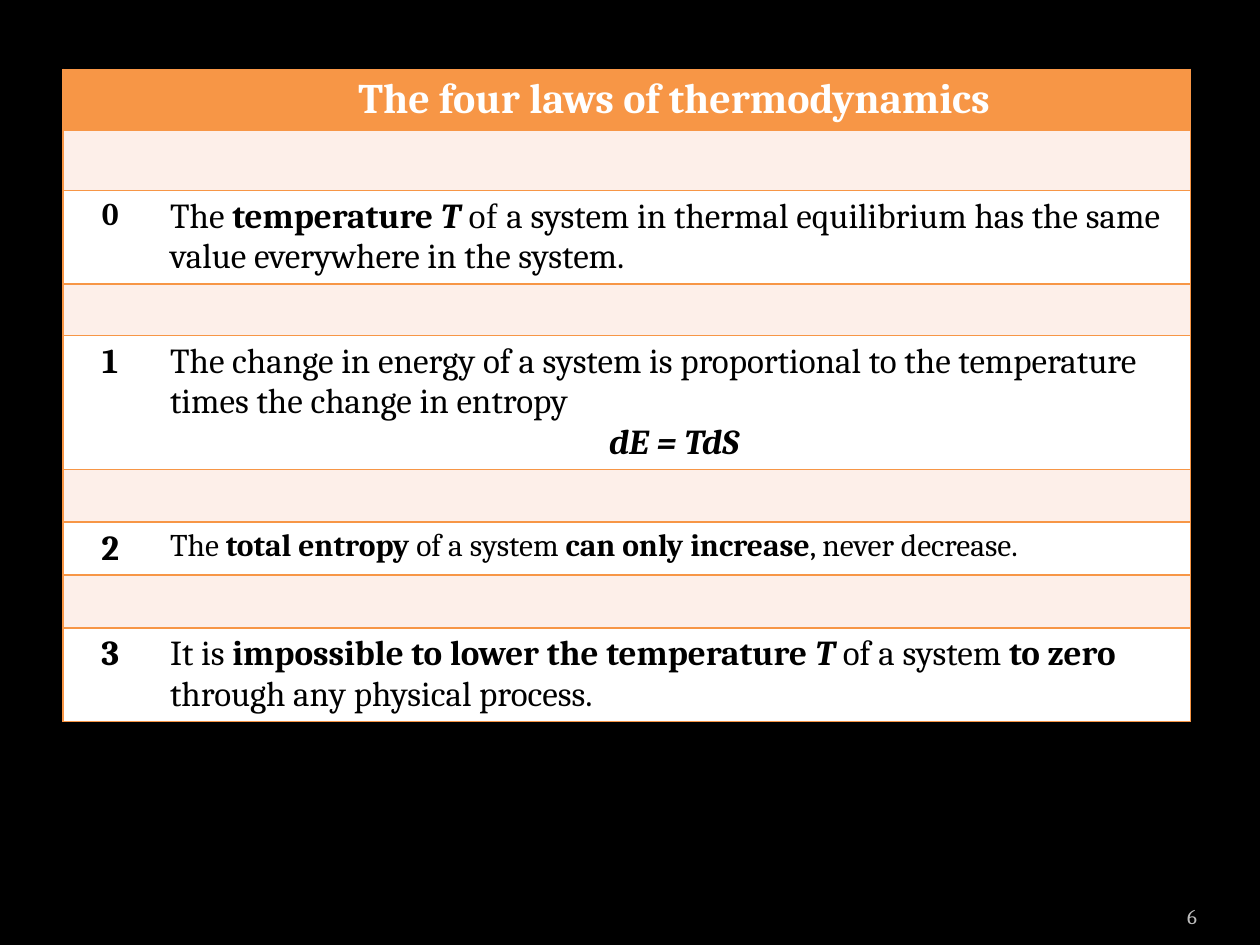
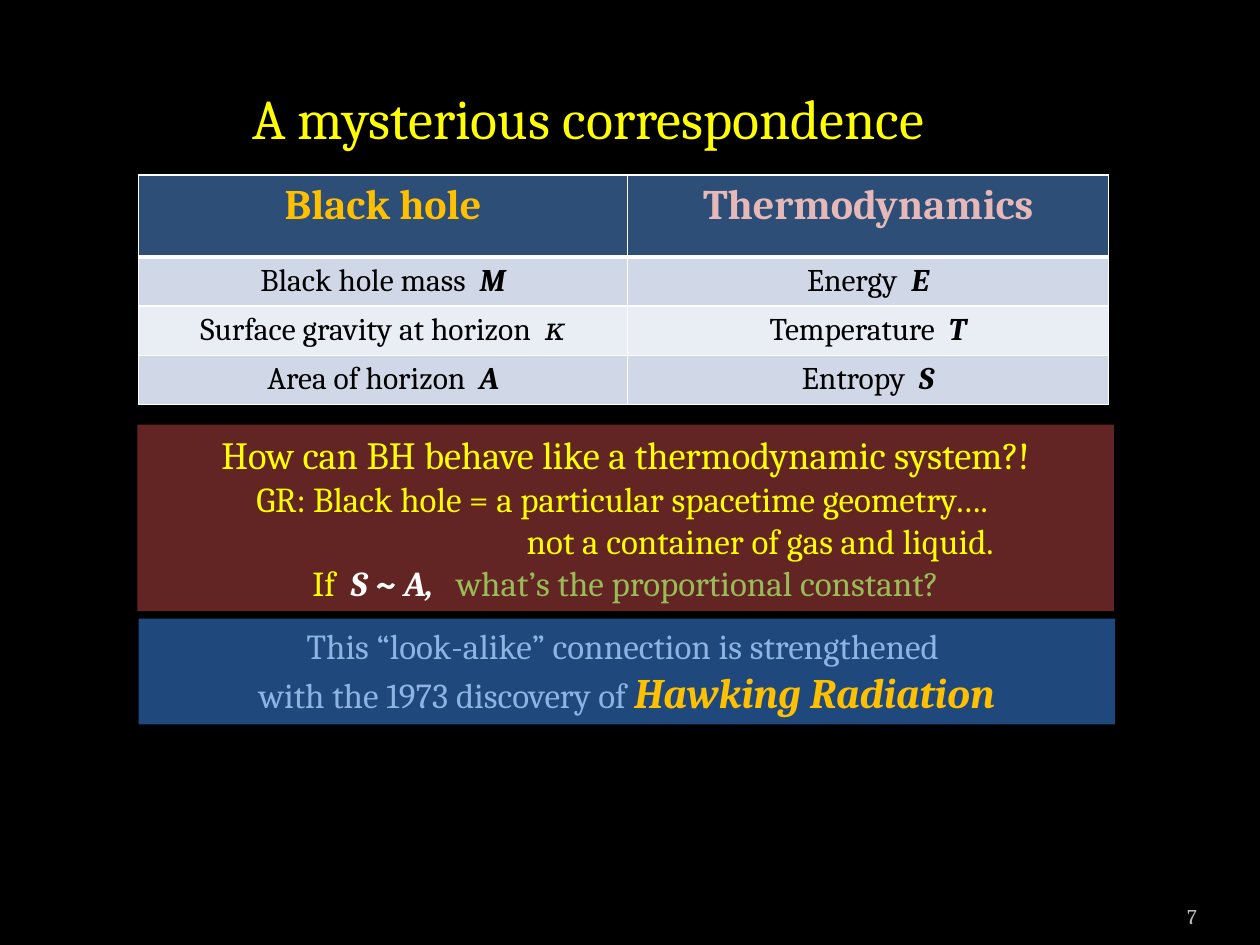
from dataclasses import dataclass
from lxml.etree import SubElement
from pptx import Presentation
from pptx.dml.color import RGBColor
from pptx.enum.shapes import MSO_SHAPE
from pptx.enum.text import MSO_ANCHOR as ANCHOR, MSO_AUTO_SIZE as AUTO, PP_ALIGN as ALIGN
from pptx.oxml.ns import qn
from pptx.util import Inches, Pt


@dataclass(frozen=True)
class Theme:
    font: str = "Cambria"
    alt_font: str = "Times New Roman"
    black: str = "000000"
    white: str = "FFFFFF"
    orange: str = "F79646"
    peach: str = "FDEFE9"
    navy: str = "2D4E77"
    band_dark: str = "D0D8E8"
    band_light: str = "E9EDF4"
    yellow: str = "FFFF00"
    gold: str = "FFC000"
    pink: str = "E6B9B8"
    green: str = "9BBB59"
    sky: str = "8EB4E3"
    maroon: str = "632523"
    blue: str = "1F497D"
    grey: str = "BDBDBD"
    title: int = 32
    heading: int = 24
    lead: int = 22
    body: int = 20
    small: int = 18
    footer: int = 12


T = Theme()
NO_GRID_STYLE = "{2D5ABB26-0587-4C30-8999-92F81FD0307C}"
BOLD = {"bold": True}
SYMBOL = {"bold": True, "italic": True}


def add_run(p, text, size=T.body, color=T.black, font=T.font, bold=False, italic=False):
    r = p.add_run()
    r.text = text
    f = r.font
    f.name, f.size, f.bold, f.italic = font, Pt(size), bold, italic
    f.color.rgb = RGBColor.from_string(color)


def write(tf, *paragraphs, align=ALIGN.LEFT, **fmt):
    for i, runs in enumerate(paragraphs):
        p = tf.add_paragraph() if i else tf.paragraphs[0]
        p.alignment = align
        for run in [runs] if isinstance(runs, str) else runs:
            text, own = (run, {}) if isinstance(run, str) else run
            add_run(p, text, **{**fmt, **own})


def paint(sp, color):
    sp.fill.solid()
    sp.fill.fore_color.rgb = RGBColor.from_string(color)


def style_cell(cell, fill, borders):
    tc_pr = cell._tc.get_or_add_tcPr()
    for side in "LRTB":
        if side in borders:
            color, width = borders[side]
            ln = SubElement(tc_pr, qn(f"a:ln{side}"), w=str(Pt(width)))
            SubElement(SubElement(ln, qn("a:solidFill")), qn("a:srgbClr"), val=color)
    paint(cell, fill)


def add_table(slide, left, top, widths, heights):
    frame = slide.shapes.add_table(len(heights), len(widths), Inches(left), Inches(top),
                                   Inches(sum(widths)), Inches(sum(heights)))
    table = frame.table
    table.first_row = table.horz_banding = False
    table._tbl.tblPr.find(qn("a:tableStyleId")).text = NO_GRID_STYLE
    for col, width in zip(table.columns, widths):
        col.width = Inches(width)
    for row, height in zip(table.rows, heights):
        row.height = Inches(height)
    return table


def add_page_number(slide, number):
    tf = slide.shapes.add_textbox(Inches(8.67), Inches(7.02), Inches(0.83), Inches(0.4)).text_frame
    tf.word_wrap = True
    tf.margin_left = tf.margin_right = 0
    tf.vertical_anchor = ANCHOR.BOTTOM
    write(tf, str(number), align=ALIGN.RIGHT, size=T.footer, color=T.grey)


def add_title(slide, text, left, top, width, height):
    sp = slide.shapes.title
    sp.left, sp.top, sp.width, sp.height = map(Inches, (left, top, width, height))
    tf = sp.text_frame
    tf.auto_size = AUTO.NONE
    tf.vertical_anchor = ANCHOR.TOP
    write(tf, text, size=T.title, color=T.yellow)


def add_panel(slide, left, top, width, height, fill, *paragraphs, **fmt):
    sp = slide.shapes.add_shape(MSO_SHAPE.RECTANGLE, *map(Inches, (left, top, width, height)))
    sp.shadow.inherit = False
    paint(sp, fill)
    sp.line.fill.background()
    tf = sp.text_frame
    tf.word_wrap = True
    tf.vertical_anchor = ANCHOR.TOP
    write(tf, *paragraphs, align=ALIGN.CENTER, **fmt)
    return tf


def add_laws_table(slide, left, top):
    laws = [
        ("0", T.small, T.body, 0.74, [
            "The ", ("temperature ", BOLD), ("T ", SYMBOL), ("of ", {"font": T.alt_font}),
            "a system in thermal equilibrium has the same value everywhere in the system."]),
        ("1", T.small, T.body, 1.06, [
            "The change in energy of a system is proportional to the temperature "
            "times the change in entropy"]),
        ("2", T.body, T.small, 0.42, [
            "The ", ("total entropy ", BOLD), "of a system ", ("can only increase", BOLD),
            ", never decrease."]),
        ("3", T.body, T.body, 0.74, [
            "It is ", ("impossible to lower the temperature ", BOLD), ("T", SYMBOL),
            " of a system ", ("to zero ", BOLD), "through any physical process."]),
    ]
    gaps = [0.48, 0.41, 0.42, 0.42]
    heights = [0.48]
    for gap, law in zip(gaps, laws):
        heights += [gap, law[3]]
    table = add_table(slide, left, top, [0.75, 8.2], heights)

    edge = (T.orange, 1)
    for i in range(len(heights)):
        fill = T.orange if i == 0 else T.peach if i % 2 else T.white
        for j, outer in enumerate("LR"):
            style_cell(table.cell(i, j), fill, dict.fromkeys(outer + "TB", edge))

    write(table.cell(0, 1).text_frame, "The four laws of thermodynamics",
          align=ALIGN.CENTER, size=T.heading, color=T.white, bold=True)
    for i, (number, number_size, size, _, runs) in enumerate(laws):
        row = 2 * i + 2
        write(table.cell(row, 0).text_frame, number, align=ALIGN.CENTER,
              size=T.body if number == "1" else number_size, bold=True)
        write(table.cell(row, 1).text_frame, runs, size=size)
    formula = table.cell(4, 1).text_frame.add_paragraph()
    formula.alignment = ALIGN.CENTER
    add_run(formula, "dE = TdS", **SYMBOL)


def add_correspondence_table(slide, left, top):
    headings = [("Black hole", T.gold), ("Thermodynamics", T.pink)]
    pairs = [
        (("Black hole mass  ", "M"), ("Energy  ", "E")),
        (("Surface gravity at horizon  ", "𝜅"), ("Temperature  ", "T")),
        (("Area of horizon  ", "A"), ("Entropy  ", "S")),
    ]
    table = add_table(slide, left, top, [3.88, 3.82], [0.65] + [0.39] * len(pairs))
    edges = dict.fromkeys("LRTB", (T.white, 1))
    rule = (T.white, 3)
    for j, (text, color) in enumerate(headings):
        cell = table.cell(0, j)
        style_cell(cell, T.navy, {**edges, "B": rule})
        write(cell.text_frame, text, align=ALIGN.CENTER, size=T.heading, color=color, bold=True)
    for i, pair in enumerate(pairs, 1):
        for j, (name, symbol) in enumerate(pair):
            cell = table.cell(i, j)
            style_cell(cell, T.band_dark if i % 2 else T.band_light,
                       {**edges, "T": rule} if i == 1 else edges)
            write(cell.text_frame, [name, (symbol, SYMBOL)], align=ALIGN.CENTER, size=T.small)


def add_question_panel(slide, left, top, width, height):
    white = {"color": T.white, "bold": True}
    tf = add_panel(
        slide, left, top, width, height, T.maroon,
        [("How can BH behave like a thermodynamic system?!", {"size": T.lead})],
        "GR: Black hole = a particular spacetime geometry…. ",
        "not a container of gas and liquid.",
        ["If  ", ("S", {**white, "italic": True}), (" ~ ", white),
         ("A, ", {**white, "italic": True}),
         ("  what’s the proportional constant?", {"color": T.green})],
        color=T.yellow)
    tf.paragraphs[2]._p.get_or_add_pPr().set("marL", str(Inches(2.14)))


def add_discovery_panel(slide, left, top, width, height):
    add_panel(
        slide, left, top, width, height, T.blue,
        "This “look-alike” connection is strengthened ",
        ["with the 1973 discovery of ",
         ("Hawking Radiation", {**SYMBOL, "size": T.heading, "color": T.gold})],
        color=T.sky)


def build_laws_slide(prs):
    s = prs.slides.add_slide(prs.slide_layouts[6])
    add_laws_table(s, 0.5, 0.55)
    add_page_number(s, 6)


def build_correspondence_slide(prs):
    s = prs.slides.add_slide(prs.slide_layouts[5])
    add_title(s, "A mysterious correspondence", 1.9, 0.61, 6.1, 0.64)
    add_correspondence_table(s, 1.1, 1.39)
    add_question_panel(s, 1.09, 3.37, 7.75, 1.48)
    add_discovery_panel(s, 1.1, 4.91, 7.75, 0.84)
    add_page_number(s, 7)


def main():
    prs = Presentation()
    prs.slide_width, prs.slide_height = Inches(10), Inches(7.5)
    paint(prs.slide_master.background, T.black)
    build_laws_slide(prs)
    build_correspondence_slide(prs)
    prs.save("out.pptx")


if __name__ == "__main__":
    main()
